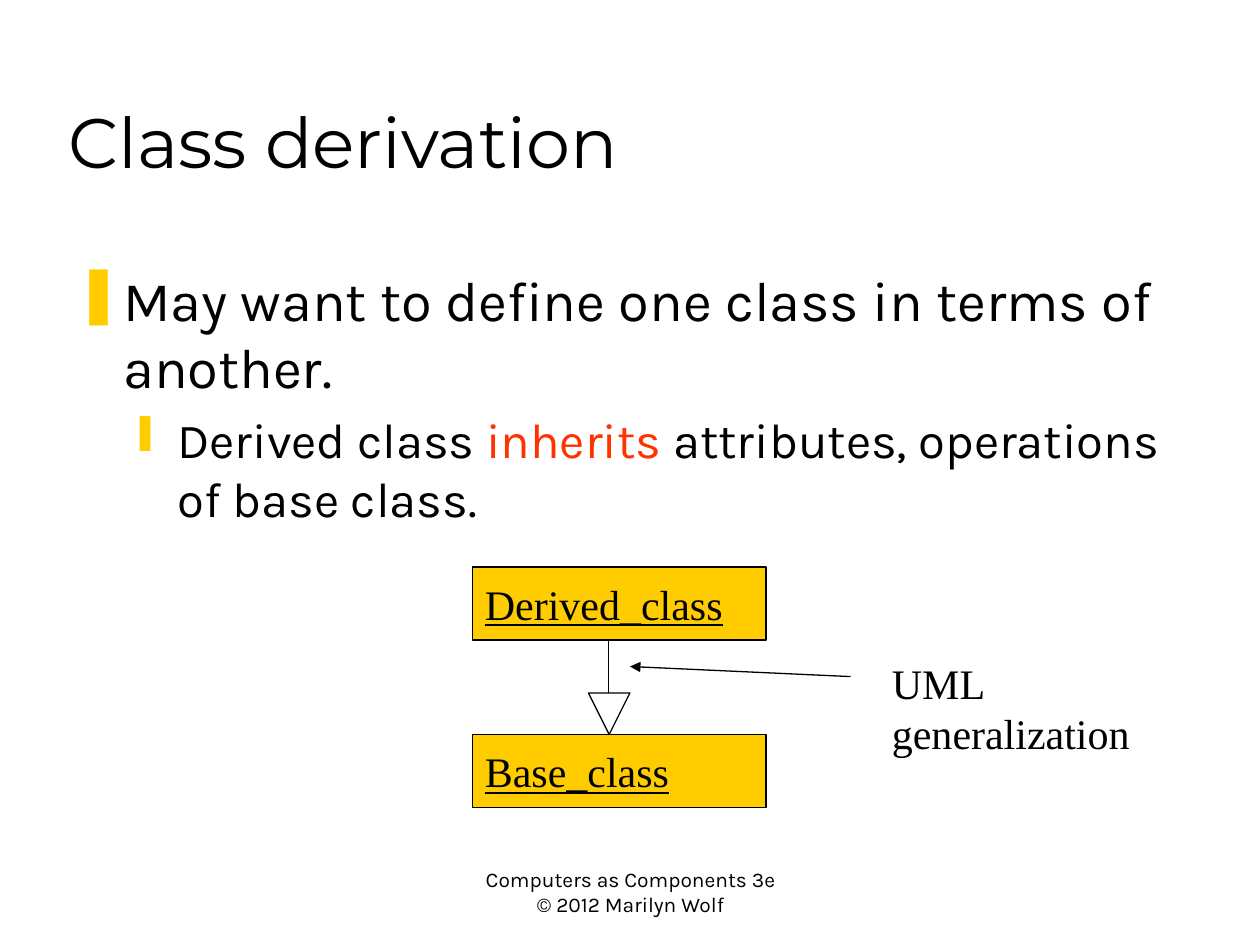
import pptx
import pptx.dml.color
import pptx.enum.shapes
import pptx.enum.text
import pptx.oxml
import pptx.oxml.ns
import pptx.util

Inches = pptx.util.Inches
Pt = pptx.util.Pt
RGBColor = pptx.dml.color.RGBColor
MSO_SHAPE = pptx.enum.shapes.MSO_SHAPE
MSO_ANCHOR = pptx.enum.text.MSO_ANCHOR
PP_ALIGN = pptx.enum.text.PP_ALIGN

BLACK = RGBColor(0x00, 0x00, 0x00)
WHITE = RGBColor(0xFF, 0xFF, 0xFF)
GOLD = RGBColor(0xFF, 0xCC, 0x00)
RED = RGBColor(0xFF, 0x33, 0x00)
TITLE_FONT = "Montserrat"
BODY_FONT = "Karla"
DIAGRAM_FONT = "Times New Roman"


def style_font(font, name, size, color=BLACK):
    """Set the face, size and colour of a font."""
    font.name = name
    font.size = Pt(size)
    font.color.rgb = color


def add_drawing_element(parent, tag, **attributes):
    """Append a DrawingML element to its parent and return it."""
    element = pptx.oxml.parse_xml(f"<a:{tag} {pptx.oxml.ns.nsdecls('a')}/>")
    for key, value in attributes.items():
        element.set(key, value)
    parent.append(element)
    return element


def set_title(slide, text):
    """Place and format the title placeholder."""
    title = slide.shapes.title
    title.left, title.top = Inches(0.44), Inches(0.25)
    title.width, title.height = Inches(8.5), Inches(1.25)
    title.text_frame.text = text
    title.text_frame.vertical_anchor = MSO_ANCHOR.BOTTOM
    paragraph = title.text_frame.paragraphs[0]
    paragraph.alignment = PP_ALIGN.LEFT
    style_font(paragraph.runs[0].font, TITLE_FONT, 40)


def add_text(slide, left, top, width, height, lines, font, size, align=PP_ALIGN.LEFT, wrap=True):
    """Add a text box with one paragraph for each line."""
    frame = slide.shapes.add_textbox(
        Inches(left), Inches(top), Inches(width), Inches(height)).text_frame
    frame.word_wrap = wrap
    frame.text = "\n".join(lines)
    for paragraph in frame.paragraphs:
        paragraph.alignment = align
        for run in paragraph.runs:
            style_font(run.font, font, size)


def format_bullet(paragraph, level, symbol, margin, hanging):
    """Give a paragraph a gold bullet and a hanging indent."""
    paragraph.level = level
    properties = paragraph._p.get_or_add_pPr()
    properties.set("marL", str(Inches(margin)))
    properties.set("indent", str(-Inches(hanging)))
    bullet_color = add_drawing_element(properties, "buClr")
    add_drawing_element(bullet_color, "srgbClr", val=str(GOLD))
    add_drawing_element(properties, "buChar", char=symbol)


def add_body(slide):
    """Add the main point and its sub-point."""
    frame = slide.shapes.add_textbox(
        Inches(0.5), Inches(2.06), Inches(8.94), Inches(2.44)).text_frame
    frame.word_wrap = True
    frame.text = "May want to define one class in terms of another."
    point = frame.paragraphs[0]
    format_bullet(point, 0, "❚", 0.38, 0.38)
    style_font(point.runs[0].font, BODY_FONT, 32)

    subpoint = frame.add_paragraph()
    format_bullet(subpoint, 1, "❙", 0.81, 0.31)
    subpoint.space_before = Pt(5.6)
    for text, color in (("Derived class ", BLACK), ("inherits", RED),
                        (" attributes, operations of base class.", BLACK)):
        run = subpoint.add_run()
        run.text = text
        style_font(run.font, BODY_FONT, 28, color)


def add_outlined_shape(slide, kind, left, top, width, height, fill):
    """Add a filled shape with a thin black outline."""
    shape = slide.shapes.add_shape(
        kind, Inches(left), Inches(top), Inches(width), Inches(height))
    shape.shadow.inherit = False
    shape.fill.solid()
    shape.fill.fore_color.rgb = fill
    shape.line.color.rgb = BLACK
    shape.line.width = Pt(0.75)
    return shape


def add_class_box(slide, top, name):
    """Add a gold class box with its underlined name."""
    box = add_outlined_shape(slide, MSO_SHAPE.RECTANGLE, 3.75, top, 2.33, 0.58, GOLD)
    frame = box.text_frame
    frame.text = name
    frame.vertical_anchor = MSO_ANCHOR.MIDDLE
    paragraph = frame.paragraphs[0]
    paragraph.alignment = PP_ALIGN.LEFT
    font = paragraph.runs[0].font
    style_font(font, DIAGRAM_FONT, 24)
    font.underline = True


def add_line(slide, start, end, arrow=False):
    """Add a thin black line, with an arrowhead at its end if asked."""
    line = slide.shapes.add_connector(
        pptx.enum.shapes.MSO_CONNECTOR.STRAIGHT,
        *(Inches(value) for value in start + end))
    line.line.color.rgb = BLACK
    line.line.width = Pt(0.75)
    if arrow:
        add_drawing_element(line.line._get_or_add_ln(), "tailEnd", type="triangle")
    add_drawing_element(line._element.spPr, "effectLst")


def add_class_diagram(slide):
    """Draw the derived class pointing to its base class."""
    add_class_box(slide, 4.5, "Derived_class")
    add_class_box(slide, 5.83, "Base_class")
    arrowhead = add_outlined_shape(
        slide, MSO_SHAPE.ISOSCELES_TRIANGLE, 4.67, 5.5, 0.33, 0.33, WHITE)
    arrowhead._element.spPr.xfrm.set("flipV", "1")
    add_line(slide, (4.83, 5.5), (4.83, 5.08))
    add_line(slide, (6.75, 5.37), (5, 5.29), arrow=True)
    add_text(slide, 6.98, 5.17, 2.09, 0.9, ("UML", "generalization"),
             DIAGRAM_FONT, 24, wrap=False)


def main():
    """Build the class derivation slide."""
    presentation = pptx.Presentation()
    presentation.slide_width = Inches(10)
    presentation.slide_height = Inches(7.5)
    slide = presentation.slides.add_slide(presentation.slide_layouts[5])
    add_text(slide, 3.67, 6.83, 2.67, 0.5,
             ("Computers as Components 3e", "© 2012 Marilyn Wolf"),
             BODY_FONT, 12, align=PP_ALIGN.CENTER)
    set_title(slide, "Class derivation")
    add_body(slide)
    add_class_diagram(slide)
    presentation.save("out.pptx")


if __name__ == "__main__":
    main()
